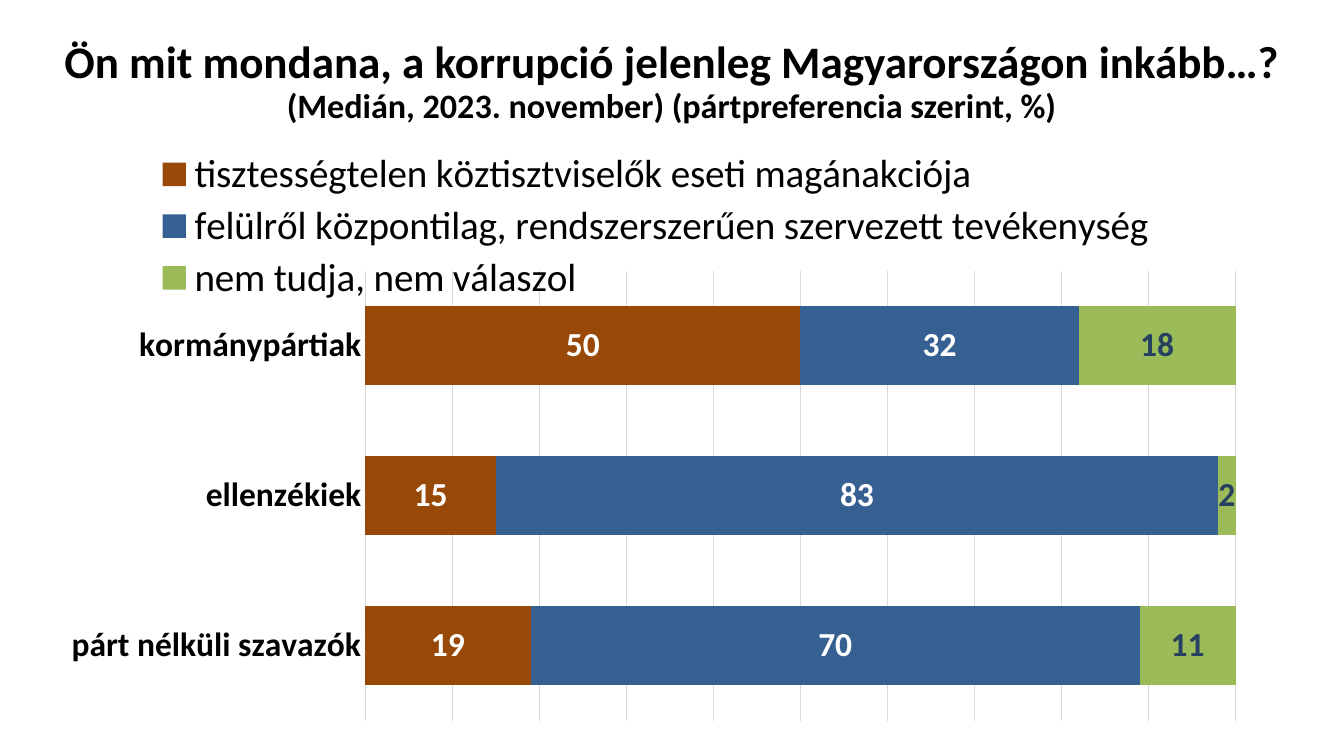
from dataclasses import dataclass

from lxml.etree import SubElement
from pptx import Presentation
from pptx.chart.data import CategoryChartData
from pptx.dml.color import RGBColor
from pptx.enum.chart import (XL_CHART_TYPE, XL_LABEL_POSITION, XL_LEGEND_POSITION,
                             XL_TICK_LABEL_POSITION, XL_TICK_MARK)
from pptx.enum.text import MSO_ANCHOR, MSO_AUTO_SIZE, PP_ALIGN
from pptx.oxml.ns import qn
from pptx.util import Inches, Pt


@dataclass(frozen=True)
class Theme:
    face: str = "Calibri"
    ink: str = "000000"
    grid: str = "D9D9D9"
    brown: str = "984807"
    blue: str = "376092"
    green: str = "9BBB59"
    white: str = "FFFFFF"
    navy: str = "254061"
    head: float = 32.2
    sub: float = 24.4
    key: float = 28
    label: float = 24
    base: float = 10


THEME = Theme()
HEAD = [
    ("Ön mit mondana, a korrupció jelenleg Magyarországon inkább…?", THEME.head),
    ("(Medián, 2023. november) (pártpreferencia szerint, %)", THEME.sub),
]
GROUPS = ["párt nélküli szavazók", "ellenzékiek", "kormánypártiak"]
SERIES = [
    ("tisztességtelen köztisztviselők eseti magánakciója", [19, 15, 50],
     THEME.brown, THEME.white),
    ("felülről központilag, rendszerszerűen szervezett tevékenység", [70, 83, 32],
     THEME.blue, THEME.white),
    ("nem tudja, nem válaszol", [11, 2, 18], THEME.green, THEME.navy),
]


def style(font, size, color=THEME.ink, bold=False):
    font.name = THEME.face
    font.size = Pt(size)
    font.bold = bold
    font.color.rgb = RGBColor.from_string(color)


def rule(line):
    line.color.rgb = RGBColor.from_string(THEME.grid)
    line.width = Pt(0.75)


def place(part, index, box, inner=False):
    for old in part.findall(qn("c:layout")):
        part.remove(old)
    frame = SubElement(part, qn("c:layout"))
    part.insert(index, frame)
    manual = SubElement(frame, qn("c:manualLayout"))
    pairs = [("layoutTarget", "inner")] if inner else []
    pairs += [("xMode", "edge"), ("yMode", "edge")]
    pairs += zip("xywh", box)
    for tag, value in pairs:
        SubElement(manual, qn("c:" + tag)).set("val", str(value))


def add_head(slide, left, top, width, height):
    title = slide.shapes.title
    title.left, title.top = Inches(left), Inches(top)
    title.width, title.height = Inches(width), Inches(height)
    frame = title.text_frame
    frame.word_wrap = True
    frame.auto_size = MSO_AUTO_SIZE.NONE
    frame.vertical_anchor = MSO_ANCHOR.MIDDLE
    para = frame.paragraphs[0]
    para.alignment = PP_ALIGN.CENTER
    para.line_spacing = 0.9
    for row, (text, size) in enumerate(HEAD):
        if row:
            para.add_line_break()
        run = para.add_run()
        run.text = text
        style(run.font, size, bold=True)


def add_bars(slide, left, top, width, height):
    data = CategoryChartData(number_format="0")
    data.categories = GROUPS
    for name, values, _, _ in SERIES:
        data.add_series(name, values)
    chart = slide.shapes.add_chart(
        XL_CHART_TYPE.BAR_STACKED_100, Inches(left), Inches(top),
        Inches(width), Inches(height), data).chart
    chart.has_title = False
    style(chart.font, THEME.base)

    plot = chart.plots[0]
    plot.gap_width, plot.overlap = 90, 100
    plot.vary_by_categories = False
    for series, (_, _, color, ink) in zip(plot.series, SERIES):
        series.format.fill.solid()
        series.format.fill.fore_color.rgb = RGBColor.from_string(color)
        labels = series.data_labels
        labels.show_value = True
        labels.position = XL_LABEL_POSITION.CENTER
        style(labels.font, THEME.label, ink, True)

    for axis in (chart.category_axis, chart.value_axis):
        axis.major_tick_mark = axis.minor_tick_mark = XL_TICK_MARK.NONE
    groups, scale = chart.category_axis, chart.value_axis
    style(groups.tick_labels.font, THEME.label, bold=True)
    rule(groups.format.line)
    groups.has_major_gridlines = False
    scale.minimum_scale, scale.maximum_scale, scale.major_unit = 0, 1, 0.1
    scale.tick_label_position = XL_TICK_LABEL_POSITION.NONE
    scale.format.line.fill.background()
    scale.has_major_gridlines = True
    rule(scale.major_gridlines.format.line)

    chart.has_legend = True
    key = chart.legend
    key.position = XL_LEGEND_POSITION.TOP
    key.include_in_layout = False
    style(key.font, THEME.key)
    area = chart.plots[0]._element.getparent()
    place(area, 0, (0.25, 0.21, 0.75, 0.76), inner=True)
    place(key._element, 1, (0.07, 0, 0.86, 0.27))


def main():
    deck = Presentation()
    deck.slide_width, deck.slide_height = Inches(13.33), Inches(7.5)
    slide = deck.slides.add_slide(deck.slide_layouts[5])
    add_bars(slide, 0.71, 1.45, 11.55, 5.88)
    add_head(slide, 0.22, 0.17, 12.88, 1.3)
    deck.save("out.pptx")


if __name__ == "__main__":
    main()
